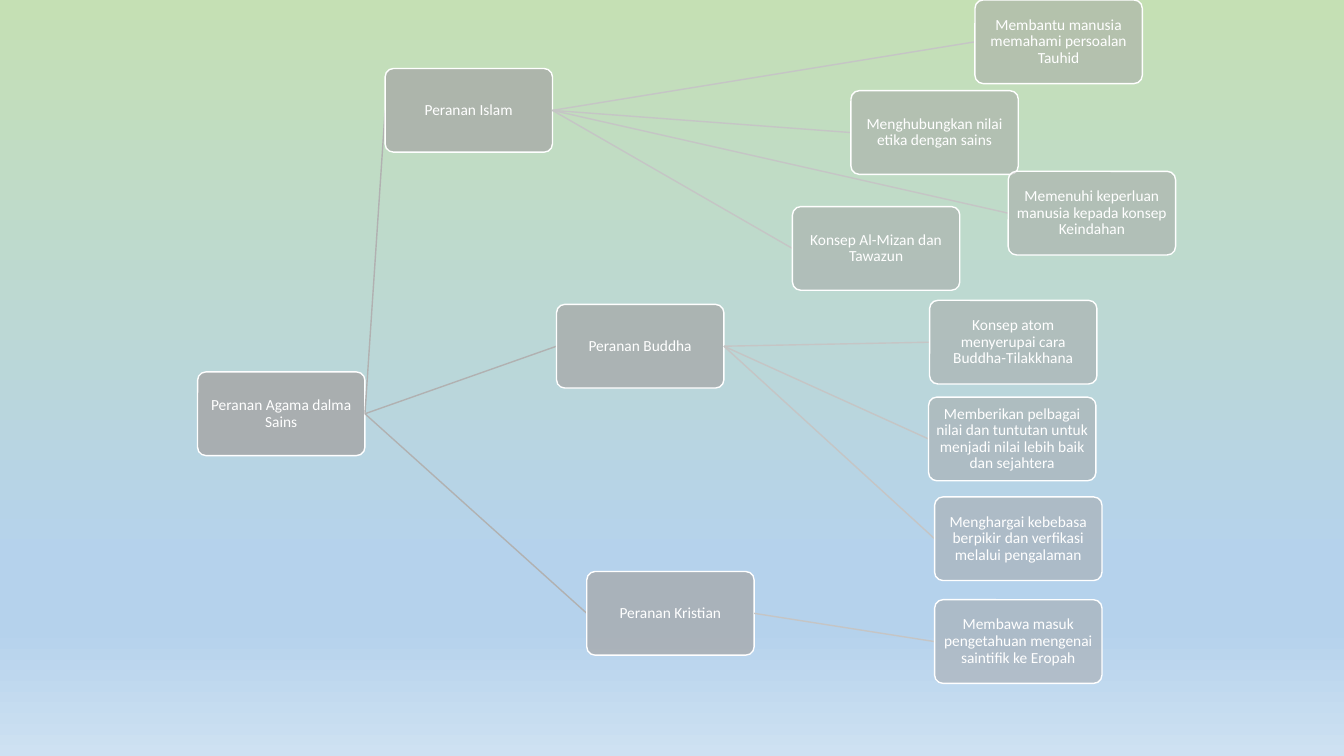
from dataclasses import dataclass

from lxml.etree import SubElement
from pptx import Presentation
from pptx.dml.color import RGBColor
from pptx.enum.shapes import MSO_CONNECTOR, MSO_SHAPE
from pptx.enum.text import MSO_ANCHOR, PP_ALIGN
from pptx.oxml.ns import qn
from pptx.shapes.autoshape import Shape
from pptx.slide import Slide
from pptx.util import Inches, Pt

BOX_WIDTH, BOX_HEIGHT = 1.66, 0.83
BOX_FILL, WHITE = "A5A5A5", "FFFFFF"
LEVEL_OPACITY = [80, 70, 50]  # percent: root, religion, role
LINK_COLOURS = ["B1B1B1", "C5C5C5"]  # from root, from religion
BACKGROUND_STOPS = [(0, "C5E0B4"), (74, "B5D2EC"), (83, "B5D2EC"), (100, "CEE1F2")]
LEFT_SITE, RIGHT_SITE = 1, 3


@dataclass
class Topic:
    text: str
    left: float
    top: float
    children: tuple["Topic", ...] = ()

    @property
    def middle(self) -> float:
        return self.top + BOX_HEIGHT / 2


TREE = Topic("Peranan Agama dalma Sains", 1.96, 3.69, (
    Topic("Peranan Islam", 3.82, 0.68, (
        Topic("Membantu manusia memahami persoalan Tauhid", 9.67, 0),
        Topic("Menghubungkan nilai etika dengan sains", 8.44, 0.9),
        Topic("Memenuhi keperluan manusia kepada konsep Keindahan", 10, 1.7),
        Topic("Konsep Al-Mizan dan Tawazun", 7.86, 2.05),
    )),
    Topic("Peranan Buddha", 5.52, 3.02, (
        Topic("Konsep atom menyerupai cara Buddha-Tilakkhana", 9.22, 2.98),
        Topic("Memberikan pelbagai nilai dan tuntutan untuk menjadi nilai "
              "lebih baik dan sejahtera", 9.21, 3.94),
        Topic("Menghargai kebebasa berpikir dan verfikasi melalui pengalaman",
              9.27, 4.93),
    )),
    Topic("Peranan Kristian", 5.82, 5.67, (
        Topic("Membawa masuk pengetahuan mengenai saintifik ke Eropah", 9.27, 5.95),
    )),
))


def colour(value: str) -> RGBColor:
    return RGBColor.from_string(value)


def paint_background(page: Slide) -> None:
    fill = page.background.fill
    fill.gradient()
    fill.gradient_angle = 270  # top to bottom
    stop_list = page.element.find(".//" + qn("a:gsLst"))
    for old_stop in list(stop_list):
        stop_list.remove(old_stop)
    for position, value in BACKGROUND_STOPS:
        stop = SubElement(stop_list, qn("a:gs"), pos=str(position * 1000))
        SubElement(stop, qn("a:srgbClr"), val=value)


def write_text(box: Shape, text: str, *, size: float = 11,
               font: str = "Calibri", text_colour: str = WHITE) -> None:
    frame = box.text_frame
    frame.word_wrap = True
    frame.vertical_anchor = MSO_ANCHOR.MIDDLE
    frame.margin_left = frame.margin_right = Inches(0.01)
    frame.margin_top = frame.margin_bottom = Inches(0.01)
    para = frame.paragraphs[0]
    para.alignment = PP_ALIGN.CENTER
    para.line_spacing = 0.9
    span = para.add_run()
    span.text = text
    span.font.size = Pt(size)
    span.font.name = font
    span.font.color.rgb = colour(text_colour)


def draw_box(page: Slide, topic: Topic, opacity: int) -> Shape:
    box = page.shapes.add_shape(
        MSO_SHAPE.ROUNDED_RECTANGLE, Inches(topic.left), Inches(topic.top),
        Inches(BOX_WIDTH), Inches(BOX_HEIGHT))
    box.adjustments[0] = 0.1
    box.shadow.inherit = False
    box.fill.solid()
    box.fill.fore_color.rgb = colour(BOX_FILL)
    fill_colour = box.element.spPr.find(qn("a:solidFill")).find(qn("a:srgbClr"))
    SubElement(fill_colour, qn("a:alpha"), val=str(opacity * 1000))
    box.line.color.rgb = colour(WHITE)
    box.line.width = Pt(1)
    write_text(box, topic.text)
    return box


def draw_branch(page: Slide, topic: Topic, level: int = 0) -> Shape:
    """Draw a topic, then each link followed by the branch it leads to."""
    box = draw_box(page, topic, LEVEL_OPACITY[level])
    for child in topic.children:
        # The link comes first so that it lies behind the child box
        link = page.shapes.add_connector(
            MSO_CONNECTOR.STRAIGHT,
            Inches(topic.left + BOX_WIDTH), Inches(topic.middle),
            Inches(child.left), Inches(child.middle))
        link.line.color.rgb = colour(LINK_COLOURS[level])
        link.line.width = Pt(1)
        SubElement(link.element.spPr, qn("a:effectLst"))
        child_box = draw_branch(page, child, level + 1)
        link.begin_connect(box, RIGHT_SITE)
        link.end_connect(child_box, LEFT_SITE)
    return box


def main() -> None:
    deck = Presentation()
    deck.slide_width, deck.slide_height = Inches(13.33), Inches(7.5)
    page = deck.slides.add_slide(deck.slide_layouts[6])
    paint_background(page)
    draw_branch(page, TREE)
    deck.save("out.pptx")


if __name__ == "__main__":
    main()
